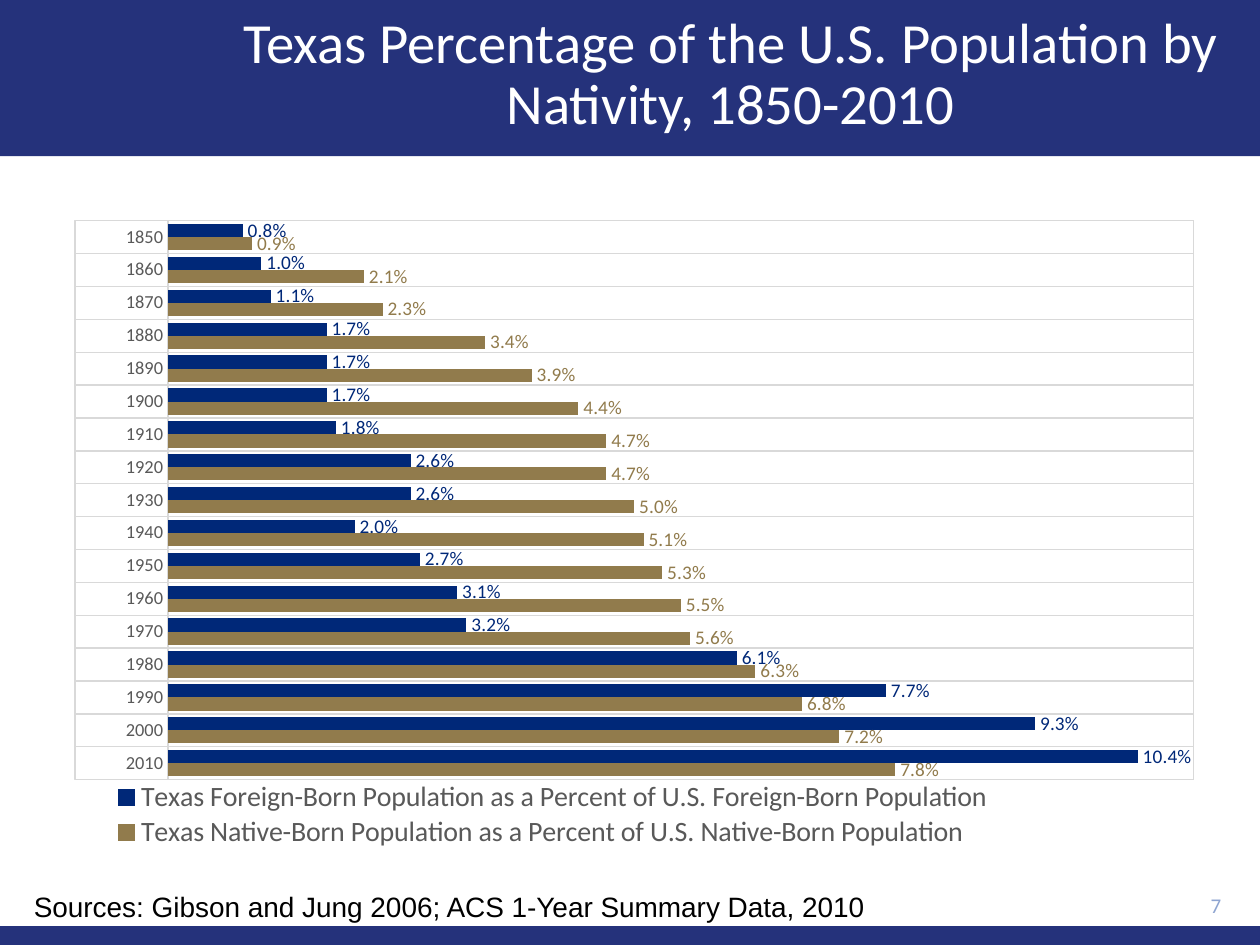
import pptx
import pptx.chart.data
import pptx.dml.color
import pptx.enum.chart
import pptx.enum.shapes
import pptx.enum.text
import pptx.oxml
import pptx.oxml.ns
import pptx.util
from pptx.util import Inches, Pt

RGBColor = pptx.dml.color.RGBColor
BAND_BLUE = RGBColor(0x25, 0x32, 0x7B)
FOREIGN_BLUE = RGBColor(0x00, 0x28, 0x78)
NATIVE_TAN = RGBColor(0x91, 0x7B, 0x4C)
PAGE_NUMBER_BLUE = RGBColor(0x8F, 0xA5, 0xD1)
GRID_GREY = RGBColor(0xD9, 0xD9, 0xD9)
TEXT_GREY = RGBColor(0x59, 0x59, 0x59)
WHITE = RGBColor(0xFF, 0xFF, 0xFF)
BLACK = RGBColor(0x00, 0x00, 0x00)

YEARS = [str(year) for year in range(2010, 1840, -10)]
SERIES = [
    ("Texas Native-Born Population as a Percent of U.S. Native-Born Population", NATIVE_TAN,
     [0.078, 0.072, 0.068, 0.063, 0.056, 0.055, 0.053, 0.051, 0.050,
      0.047, 0.047, 0.044, 0.039, 0.034, 0.023, 0.021, 0.009]),
    ("Texas Foreign-Born Population as a Percent of U.S. Foreign-Born Population", FOREIGN_BLUE,
     [0.104, 0.093, 0.077, 0.061, 0.032, 0.031, 0.027, 0.020, 0.026,
      0.026, 0.018, 0.017, 0.017, 0.017, 0.011, 0.010, 0.008]),
]


def style_font(font, name, size, color):
    font.name = name
    font.size = Pt(size)
    font.color.rgb = color


def add_band(page, left, top, width, height):
    band = page.shapes.add_shape(pptx.enum.shapes.MSO_SHAPE.RECTANGLE, left, top, width, height)
    band.shadow.inherit = False
    band.fill.solid()
    band.fill.fore_color.rgb = BAND_BLUE
    band.line.fill.background()


def add_text(page, area, text, font, align, anchor, line_spacing=None):
    box = page.shapes.add_textbox(*area)
    box.text_frame.word_wrap = True
    box.text_frame.vertical_anchor = anchor
    box.text_frame.text = text
    para = box.text_frame.paragraphs[0]
    para.alignment = align
    para.line_spacing = line_spacing
    style_font(para.runs[0].font, *font)


def set_manual_layout(parent, position, x, y, width, height, target=""):
    """Place a chart part by fractions of the chart, as child number position of parent."""
    for old in parent.findall(pptx.oxml.ns.qn("c:layout")):
        parent.remove(old)
    parent.insert(position, pptx.oxml.parse_xml(
        f'<c:layout {pptx.oxml.ns.nsdecls("c")}><c:manualLayout>{target}'
        '<c:xMode val="edge"/><c:yMode val="edge"/>'
        f'<c:x val="{x}"/><c:y val="{y}"/><c:w val="{width}"/><c:h val="{height}"/>'
        '</c:manualLayout></c:layout>'))


def frame_plot_area(plot_area):
    set_manual_layout(plot_area, 0, 0.02, 0.02, 0.96, 0.87, '<c:layoutTarget val="inner"/>')
    plot_area.append(pptx.oxml.parse_xml(
        f'<c:spPr {pptx.oxml.ns.nsdecls("c", "a")}><a:noFill/><a:ln w="9525"><a:solidFill>'
        f'<a:srgbClr val="{GRID_GREY}"/></a:solidFill></a:ln></c:spPr>'))


def style_axes(chart):
    years = chart.category_axis
    years.major_tick_mark = pptx.enum.chart.XL_TICK_MARK.NONE
    years.has_major_gridlines = True
    style_font(years.tick_labels.font, "Calibri", 10.5, TEXT_GREY)
    for line in (years.format.line, years.major_gridlines.format.line):
        line.color.rgb = GRID_GREY
        line.width = Pt(0.75)

    shares = chart.value_axis
    shares.minimum_scale = -0.01
    shares.maximum_scale = 0.11
    shares.has_major_gridlines = False
    shares.visible = False


def style_bars(plot):
    plot.gap_width = 50
    plot.overlap = 0
    plot.vary_by_categories = False
    for series, (_, color, _) in zip(plot.series, SERIES):
        series.format.fill.solid()
        series.format.fill.fore_color.rgb = color
        labels = series.data_labels
        labels.show_value = True
        labels.number_format = "0.0%"
        labels.number_format_is_linked = False
        labels.position = pptx.enum.chart.XL_LABEL_POSITION.OUTSIDE_END
        style_font(labels.font, "Calibri", 11, color)


def add_legend(chart):
    chart.has_legend = True
    legend = chart.legend
    legend.position = pptx.enum.chart.XL_LEGEND_POSITION.BOTTOM
    legend.include_in_layout = False
    style_font(legend.font, "Calibri", 16, TEXT_GREY)
    set_manual_layout(legend._element, 1, 0.03, 0.89, 0.8, 0.11)


def add_population_chart(page, left, top, width, height):
    data = pptx.chart.data.CategoryChartData(number_format="0.0%")
    data.categories = YEARS
    for name, _, values in SERIES:
        data.add_series(name, values)
    chart = page.shapes.add_chart(
        pptx.enum.chart.XL_CHART_TYPE.BAR_CLUSTERED, left, top, width, height, data).chart
    chart.has_title = False
    style_font(chart.font, "Calibri", 10, BLACK)
    style_axes(chart)
    style_bars(chart.plots[0])
    add_legend(chart)
    frame_plot_area(chart._chartSpace.chart.plotArea)


def main():
    deck = pptx.Presentation()
    deck.slide_width = Inches(10)
    deck.slide_height = Inches(7.5)
    page = deck.slides.add_slide(deck.slide_layouts[6])
    align = pptx.enum.text.PP_ALIGN
    anchor = pptx.enum.text.MSO_ANCHOR

    add_band(page, 0, 0, deck.slide_width, Inches(1.24))
    add_band(page, 0, Inches(7.35), deck.slide_width, Inches(0.15))
    add_text(page, (Inches(1.7), Inches(0.1), Inches(8.2), Inches(1)),
             "Texas Percentage of the U.S. Population by Nativity, 1850-2010",
             ("Calibri", 32.4, WHITE), align.CENTER, anchor.MIDDLE, 0.9)
    add_text(page, (Inches(8.9), Inches(7.01), Inches(0.89), Inches(0.34)),
             "7", ("Calibri", 12, PAGE_NUMBER_BLUE), align.RIGHT, anchor.MIDDLE)
    add_population_chart(page, Inches(0.41), Inches(1.65), Inches(9.25), Inches(5.1))
    add_text(page, (Inches(0.17), Inches(7.01), Inches(9.33), Inches(0.37)),
             "Sources: Gibson and Jung 2006; ACS 1-Year Summary Data, 2010",
             ("Arial", 16, BLACK), align.LEFT, anchor.TOP)
    deck.save("out.pptx")


if __name__ == "__main__":
    main()
